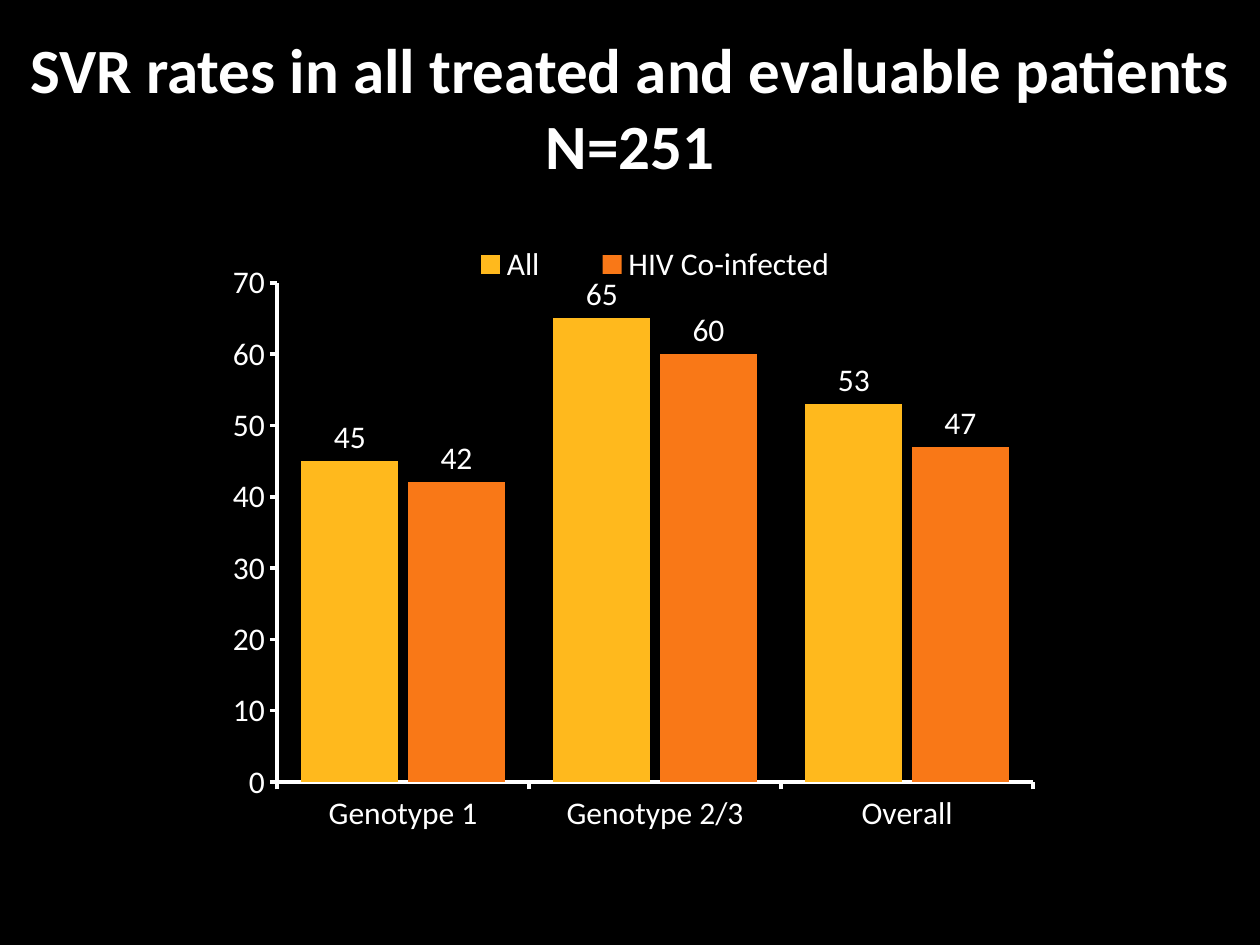
from lxml import etree
from pptx import Presentation
from pptx.chart.data import CategoryChartData
from pptx.dml.color import RGBColor
from pptx.enum.chart import (XL_CHART_TYPE, XL_LABEL_POSITION,
                             XL_LEGEND_POSITION, XL_TICK_MARK)
from pptx.enum.text import MSO_ANCHOR, PP_ALIGN
from pptx.oxml.ns import qn
from pptx.util import Emu, Pt

EMU_PER_PX = 914400 / 126
FONT = "Calibri"
COLORS = {"background": "000000", "text": "FFFFFF",
          "All": "FFB91D", "HIV Co-infected": "F97817"}
CATEGORIES = ["Genotype 1", "Genotype 2/3", "Overall"]
SVR_RATES = {"All": [45, 65, 53], "HIV Co-infected": [42, 60, 47]}

COLUMN = XL_CHART_TYPE.COLUMN_CLUSTERED
OUTSIDE_END = XL_LABEL_POSITION.OUTSIDE_END
LEGEND_RIGHT = XL_LEGEND_POSITION.RIGHT
TICK_OUTSIDE = XL_TICK_MARK.OUTSIDE
TICK_NONE = XL_TICK_MARK.NONE
MIDDLE = MSO_ANCHOR.MIDDLE
CENTER = PP_ALIGN.CENTER


def px(*values):
    return [Emu(round(v * EMU_PER_PX)) for v in values]


def color(name):
    return RGBColor.from_string(COLORS[name])


def format_font(font, size, bold=False):
    font.name = FONT
    font.size = Pt(size)
    font.bold = bold
    font.color.rgb = color("text")


def add_text(slide, text, box, size, bold=False, align=CENTER, anchor=MIDDLE):
    tf = slide.shapes.add_textbox(*px(*box)).text_frame
    tf.word_wrap = True
    tf.vertical_anchor = anchor
    p = tf.paragraphs[0]
    p.alignment = align
    r = p.add_run()
    r.text = text
    format_font(r.font, size, bold)


def set_layout(parent, index, x, y, w, h, inner=False):
    """Place a chart part by fractions of the chart area."""
    for old in parent.findall(qn("c:layout")):
        parent.remove(old)
    layout = etree.Element(qn("c:layout"))
    manual = etree.SubElement(layout, qn("c:manualLayout"))
    settings = [("layoutTarget", "inner")] if inner else []
    settings += [("xMode", "edge"), ("yMode", "edge"),
                 ("x", x), ("y", y), ("w", w), ("h", h)]
    for tag, value in settings:
        etree.SubElement(manual, qn(f"c:{tag}")).set("val", str(value))
    parent.insert(index, layout)


def style_axis(axis):
    axis.has_major_gridlines = False
    axis.major_tick_mark = TICK_OUTSIDE
    axis.minor_tick_mark = TICK_NONE
    axis.format.line.color.rgb = color("text")
    axis.format.line.width = Pt(2)
    format_font(axis.tick_labels.font, 18)


def style_series(series):
    series.format.fill.solid()
    series.format.fill.fore_color.rgb = color(series.name)
    series.format.line.fill.background()
    labels = series.data_labels
    labels.show_value = True
    labels.number_format = "0"
    labels.number_format_is_linked = False
    labels.position = OUTSIDE_END
    format_font(labels.font, 18)


def add_column_chart(slide, box):
    data = CategoryChartData()
    data.categories = CATEGORIES
    for name, rates in SVR_RATES.items():
        data.add_series(name, rates)
    chart = slide.shapes.add_chart(COLUMN, *px(*box), data).chart
    chart.has_title = False
    format_font(chart.font, 18)

    plot = chart.plots[0]
    plot.vary_by_categories = False
    plot.gap_width = 50
    plot.overlap = -10
    for series in plot.series:
        style_series(series)

    for axis in (chart.category_axis, chart.value_axis):
        style_axis(axis)
    chart.value_axis.minimum_scale = 0
    chart.value_axis.maximum_scale = 70
    chart.value_axis.major_unit = 10

    chart.has_legend = True
    legend = chart.legend
    legend.position = LEGEND_RIGHT
    legend.include_in_layout = False
    format_font(legend.font, 18)

    plot_area = chart.element.find(".//" + qn("c:plotArea"))
    set_layout(plot_area, 0, 0.22, 0.09, 0.6, 0.82, inner=True)
    set_layout(chart.element.find(".//" + qn("c:legend")), 1,
               0.34, 0.02, 0.36, 0.08)


def main():
    prs = Presentation()
    prs.slide_width, prs.slide_height = px(1260, 945)
    slide = prs.slides.add_slide(prs.slide_layouts[6])
    slide.background.fill.solid()
    slide.background.fill.fore_color.rgb = color("background")

    add_text(slide, "SVR rates in all treated and evaluable patients N=251",
             (0, -16, 1260, 244), size=36, bold=True)
    add_column_chart(slide, (0, 228, 1260, 609))
    prs.save("out.pptx")


if __name__ == "__main__":
    main()
